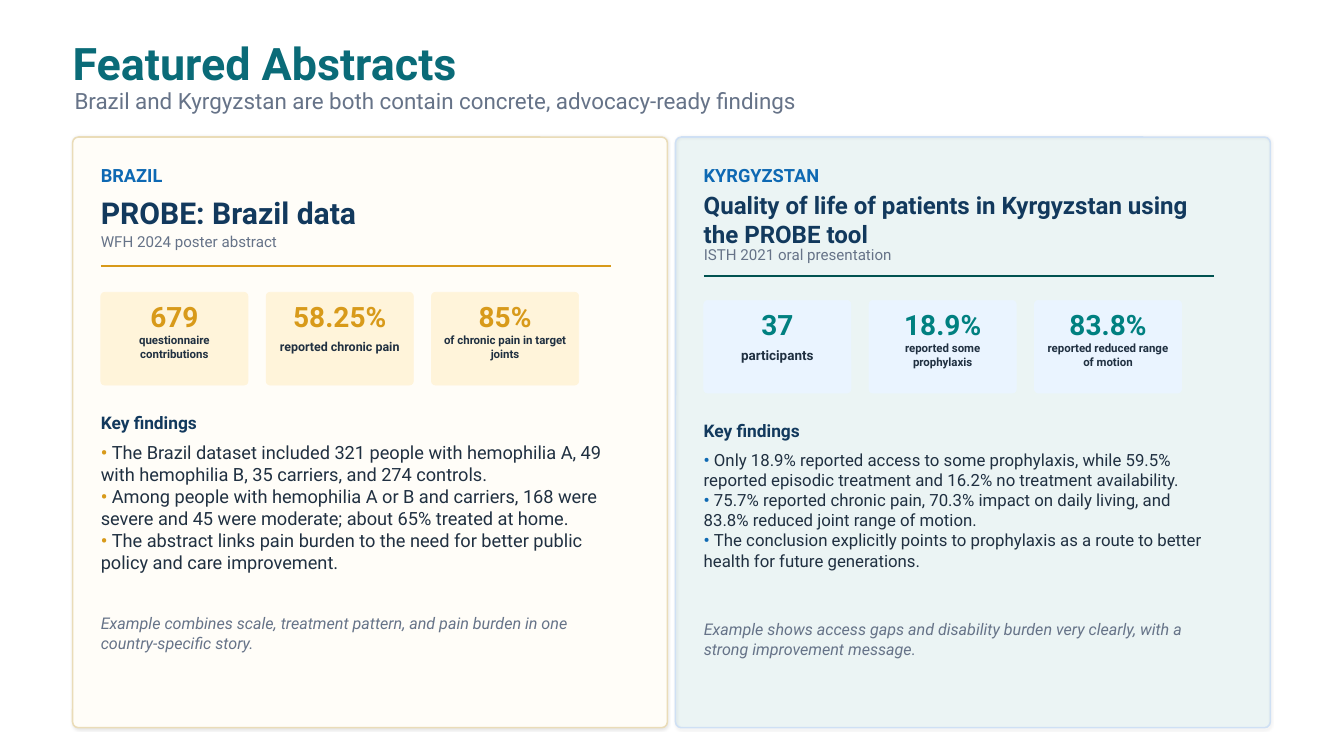
from dataclasses import dataclass

from lxml import etree
from pptx import Presentation
from pptx.dml.color import RGBColor
from pptx.enum import shapes, text
from pptx.oxml import ns
from pptx.util import Inches, Pt


@dataclass(frozen=True)
class Theme:
    font: str = "Roboto"
    title: str = "0A6B78"
    muted: str = "667388"
    country: str = "0E69B3"
    heading: str = "12395D"
    body: str = "203041"
    shadow: str = "000000"
    title_size: float = 32
    subtitle_size: float = 16
    country_size: float = 13
    source_size: float = 10.8
    value_size: float = 20
    findings_size: float = 12.4
    note_size: float = 11.5


THEME = Theme()

BRAZIL = dict(
    country="BRAZIL", study="PROBE: Brazil data", study_size=21.5,
    study_top=0.58, study_height=0.34,
    source="WFH 2024 poster abstract", source_top=0.96,
    rule_top=1.28, stats_top=1.54, note_top=4.74,
    fill="FFFDF8", alpha=100, border="EADCB8", rule="D89A1A",
    tile="FFF4DA", value_color="D89A1A", bullet="D89A1A", finding_size=13,
    stats=[("679", "questionnaire contributions", 8.2),
           ("58.25%", "reported chronic pain", 8.9),
           ("85%", "of chronic pain in target joints", 8.2)],
    findings=[
        "The Brazil dataset included 321 people with hemophilia A, 49 with "
        "hemophilia B, 35 carriers, and 274 controls.",
        "Among people with hemophilia A or B and carriers, 168 were severe "
        "and 45 were moderate; about 65% treated at home.",
        "The abstract links pain burden to the need for better public policy "
        "and care improvement."],
    note="Example combines scale, treatment pattern, and pain burden in one "
         "country-specific story.")

KYRGYZSTAN = dict(
    country="KYRGYZSTAN", study_size=17.2, study_top=0.56, study_height=0.52,
    study="Quality of life of patients in Kyrgyzstan using the PROBE tool",
    source="ISTH 2021 oral presentation", source_top=1.08,
    rule_top=1.38, stats_top=1.62, note_top=4.8,
    fill="008080", alpha=7, border="CFE0F4", rule="005250",
    tile="EAF4FF", value_color="008080", bullet="0E69B3", finding_size=12,
    stats=[("37", "participants", 9.6),
           ("18.9%", "reported some prophylaxis", 8.2),
           ("83.8%", "reported reduced range of motion", 8.2)],
    findings=[
        "Only 18.9% reported access to some prophylaxis, while 59.5% reported "
        "episodic treatment and 16.2% no treatment availability.",
        "75.7% reported chronic pain, 70.3% impact on daily living, and 83.8% "
        "reduced joint range of motion.",
        "The conclusion explicitly points to prophylaxis as a route to better "
        "health for future generations."],
    note="Example shows access gaps and disability burden very clearly, with "
         "a strong improvement message.")


def rgb(color):
    return RGBColor.from_string(color)


def add_run(paragraph, words, size, color, bold=False, italic=False):
    run = paragraph.add_run()
    run.text = words
    font = run.font
    font.name, font.size = THEME.font, Pt(size)
    font.bold, font.italic = bold, italic
    font.color.rgb = rgb(color)


def add_frame(slide, left, top, width, height, anchor=text.MSO_ANCHOR.MIDDLE):
    box = slide.shapes.add_textbox(
        Inches(left), Inches(top), Inches(width), Inches(height))
    frame = box.text_frame
    frame.word_wrap = True
    frame.vertical_anchor = anchor
    frame.margin_left = frame.margin_right = 0
    frame.margin_top = frame.margin_bottom = 0
    return frame


def add_label(slide, left, top, width, height, words, size, color,
              bold=False, italic=False, align=text.PP_ALIGN.LEFT):
    paragraph = add_frame(slide, left, top, width, height).paragraphs[0]
    paragraph.alignment = align
    add_run(paragraph, words, size, color, bold, italic)


def add_rounded(slide, left, top, width, height, radius, fill, border, weight):
    panel = slide.shapes.add_shape(
        shapes.MSO_SHAPE.ROUNDED_RECTANGLE,
        Inches(left), Inches(top), Inches(width), Inches(height))
    panel.adjustments[0] = radius
    panel.shadow.inherit = False
    panel.fill.solid()
    panel.fill.fore_color.rgb = rgb(fill)
    panel.line.color.rgb = rgb(border)
    panel.line.width = Pt(weight)
    return panel


def set_alpha(color_element, percent):
    alpha = etree.SubElement(color_element, ns.qn("a:alpha"))
    alpha.set("val", str(percent * 1000))


def add_soft_shadow(panel):
    effects = panel._element.spPr.find(ns.qn("a:effectLst"))
    shadow = etree.SubElement(
        effects, ns.qn("a:outerShdw"), blurRad=str(Pt(1.5)),
        dist=str(Pt(0.6)), dir=str(45 * 60000), algn="bl", rotWithShape="0")
    color = etree.SubElement(shadow, ns.qn("a:srgbClr"), val=THEME.shadow)
    set_alpha(color, 10)


def add_header(slide, left, top):
    add_label(slide, left, top, 8.8, 0.4, "Featured Abstracts",
              THEME.title_size, THEME.title, bold=True)
    add_label(slide, left + 0.02, top + 0.46, 8.6, 0.24,
              "Brazil and Kyrgyzstan are both contain concrete, "
              "advocacy-ready findings", THEME.subtitle_size, THEME.muted)


def add_stats(slide, left, top, abstract):
    tile_width, pitch = 1.46, 1.64
    for index, (value, meaning, meaning_size) in enumerate(abstract["stats"]):
        x = left + index * pitch
        add_rounded(slide, x, top, tile_width, 0.92, 0.043,
                    abstract["tile"], abstract["tile"], 0.5)
        add_label(slide, x + 0.12, top + 0.1, tile_width - 0.24, 0.28, value,
                  THEME.value_size, abstract["value_color"], bold=True,
                  align=text.PP_ALIGN.CENTER)
        add_label(slide, x + 0.1, top + 0.42, tile_width - 0.2, 0.24, meaning,
                  meaning_size, THEME.body, bold=True,
                  align=text.PP_ALIGN.CENTER)


def add_findings(slide, left, top, abstract):
    add_label(slide, left, top, 1.6, 0.18, "Key findings",
              THEME.findings_size, THEME.heading, bold=True)
    frame = add_frame(slide, left, top + 0.28, 4.97, 1.32, text.MSO_ANCHOR.TOP)
    for index, finding in enumerate(abstract["findings"]):
        paragraph = frame.add_paragraph() if index else frame.paragraphs[0]
        size = abstract["finding_size"]
        add_run(paragraph, "• ", size, abstract["bullet"], bold=True)
        add_run(paragraph, finding, size, THEME.body)


def add_abstract(slide, left, top, width, height, abstract):
    # Card
    card = add_rounded(slide, left, top, width, height, 0.01,
                       abstract["fill"], abstract["border"], 1.1)
    if abstract["alpha"] < 100:
        fill = card._element.spPr.find(ns.qn("a:solidFill"))
        set_alpha(fill[0], abstract["alpha"])
    add_soft_shadow(card)

    # Country, study and source
    inner = left + 0.28
    add_label(slide, inner, top + 0.3, 1.5, 0.16, abstract["country"],
              THEME.country_size, THEME.country, bold=True)
    add_label(slide, inner, top + abstract["study_top"], 5,
              abstract["study_height"], abstract["study"],
              abstract["study_size"], THEME.heading, bold=True)
    add_label(slide, inner, top + abstract["source_top"], 2.35, 0.16,
              abstract["source"], THEME.source_size, THEME.muted)

    # Rule
    rule_y = Inches(top + abstract["rule_top"])
    rule = slide.shapes.add_connector(
        shapes.MSO_CONNECTOR.STRAIGHT,
        Inches(inner), rule_y, Inches(inner + 5.06), rule_y)
    rule.line.color.rgb = rgb(abstract["rule"])
    rule.line.width = Pt(1.8)
    etree.SubElement(rule._element.spPr, ns.qn("a:effectLst"))

    # Figures, findings and closing note
    stats_y = top + abstract["stats_top"]
    add_stats(slide, inner, stats_y, abstract)
    add_findings(slide, inner, stats_y + 1.2, abstract)
    add_label(slide, inner, top + abstract["note_top"], 5.05, 0.36,
              abstract["note"], THEME.note_size, THEME.muted, italic=True)


def main():
    deck = Presentation()
    deck.slide_width, deck.slide_height = Inches(13.33), Inches(7.5)
    slide = deck.slides.add_slide(deck.slide_layouts[6])
    margin, card_width, gap = 0.72, 5.9, 0.08
    add_header(slide, margin, 0.42)
    for column, abstract in enumerate((BRAZIL, KYRGYZSTAN)):
        add_abstract(slide, margin + column * (card_width + gap), 1.36,
                     card_width, 5.86, abstract)
    deck.save("out.pptx")


if __name__ == "__main__":
    main()
